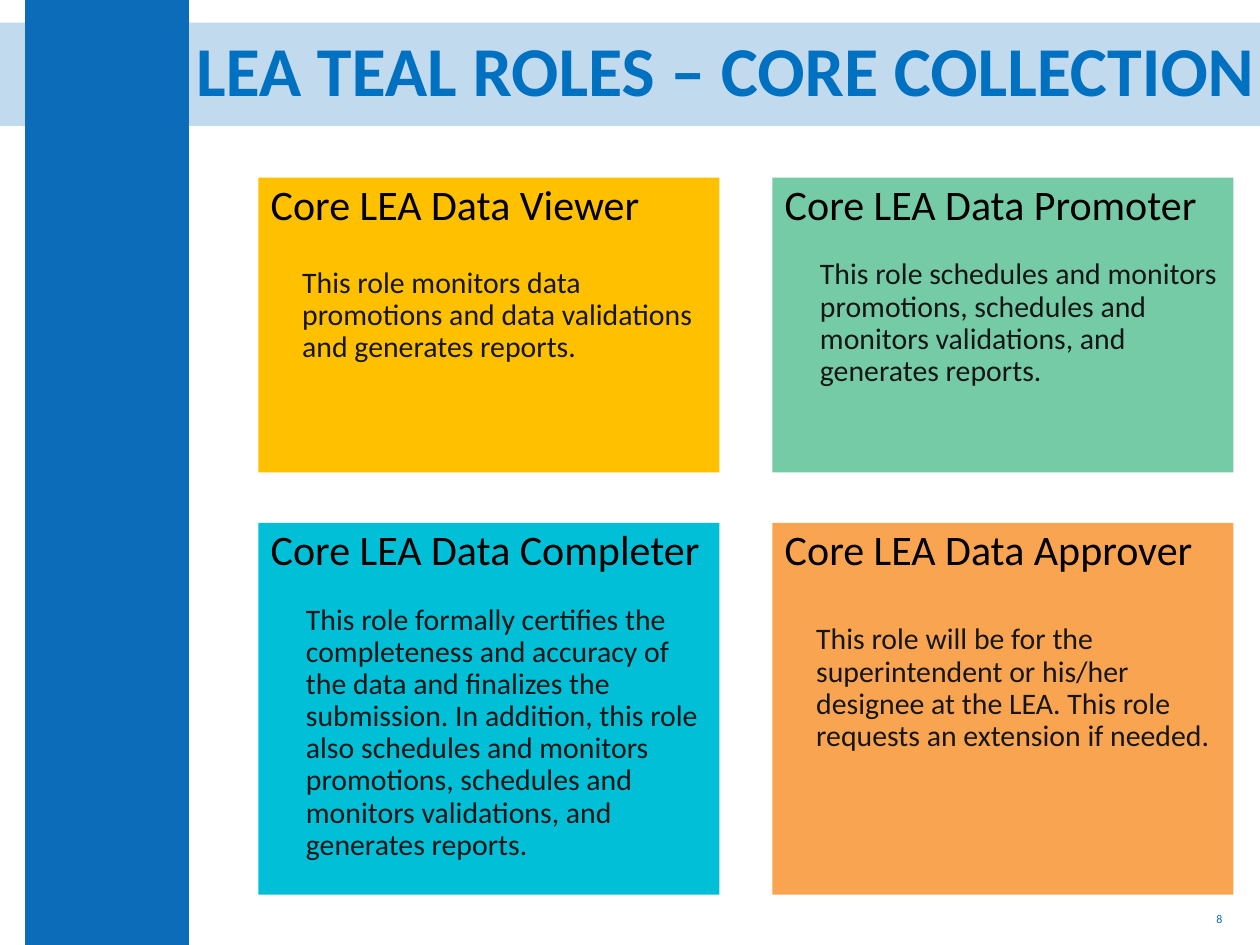
from dataclasses import dataclass

from lxml.etree import SubElement
from pptx import Presentation
from pptx.dml.color import RGBColor as RGB
from pptx.enum.shapes import MSO_SHAPE as Shape
from pptx.enum.text import MSO_ANCHOR as Anchor, PP_ALIGN as Align
from pptx.oxml.ns import qn
from pptx.util import Inches, Pt


@dataclass(frozen=True)
class Theme:
    font: str = "Calibri"
    blue: str = "0D6CB9"
    title: str = "0070C0"
    heading: str = "000000"
    body: str = "161616"
    title_size: float = 40
    heading_size: float = 24
    body_size: float = 17
    number_size: float = 6.8
    line_spacing: float = 0.9


THEME = Theme()
WIDTH, HEIGHT = 10, 7.5

# Card grid: column lefts, shared width, and (top, height) of each row
COLUMNS = (2.05, 6.13)
CARD_WIDTH = 3.66
ROWS = ((1.41, 2.34), (4.15, 2.95))

# Row, column, fill, role, description, gap above it (pt), its indent (in)
ROLES = (
    (0, 0, "FFC000", "Core LEA Data Viewer",
     "This role monitors data promotions and data validations and generates "
     "reports.", 22.2, 0.25),
    (1, 0, "00BFD7", "Core LEA Data Completer",
     "This role formally certifies the completeness and accuracy of the data "
     "and finalizes the submission. In addition, this role also schedules and "
     "monitors promotions, schedules and monitors validations, and generates "
     "reports.", 17.2, 0.28),
    (0, 1, "75CBA6", "Core LEA Data Promoter",
     "This role schedules and monitors promotions, schedules and monitors "
     "validations, and generates reports.", 17.2, 0.28),
    (1, 1, "F9A451", "Core LEA Data Approver",
     "This role will be for the superintendent or his/her designee at the "
     "LEA. This role requests an extension if needed.", 28.5, 0.25),
)


def add_block(slide, box, color):
    block = slide.shapes.add_shape(Shape.RECTANGLE, *map(Inches, box))
    block.shadow.inherit = False
    block.fill.solid()
    block.fill.fore_color.rgb = RGB.from_string(color)
    block.line.fill.background()
    return block


def write(paragraph, text, size, color, align=Align.LEFT, bold=False):
    paragraph.text = text
    paragraph.alignment = align
    paragraph.line_spacing = THEME.line_spacing
    font = paragraph.runs[0].font
    font.name, font.size, font.bold = THEME.font, Pt(size), bold
    font.color.rgb = RGB.from_string(color)


def add_label(slide, box, *style):
    frame = slide.shapes.add_textbox(*map(Inches, box)).text_frame
    frame.word_wrap = True
    frame.vertical_anchor = Anchor.MIDDLE
    write(frame.paragraphs[0], *style)
    return frame


def add_backdrop(slide, width, height):
    # Pale band across the top, then the solid side bar over it
    band = add_block(slide, (0, 0.18, width, 0.82), THEME.blue)
    tint = band.fill._xPr.find(qn("a:solidFill"))[0]
    SubElement(tint, qn("a:alpha")).set("val", "25000")
    add_block(slide, (0.2, 0, 1.3, height), THEME.blue)


def add_title(slide, box):
    frame = add_label(slide, box, "LEA TEAL ROLES – CORE COLLECTION",
                      THEME.title_size, THEME.title, Align.CENTER, True)
    frame.margin_left = frame.margin_right = 0


def add_role_card(slide, box, color, role, description, gap, indent):
    frame = add_block(slide, box, color).text_frame
    frame.word_wrap = True
    frame.vertical_anchor = Anchor.TOP
    write(frame.paragraphs[0], role, THEME.heading_size, THEME.heading)
    detail = frame.add_paragraph()
    write(detail, description, THEME.body_size, THEME.body)
    detail.space_before = Pt(gap)
    detail._p.get_or_add_pPr().set("marL", str(Inches(indent)))


def add_page_number(slide, box):
    add_label(slide, box, "8", THEME.number_size, THEME.blue, Align.RIGHT)


def main():
    deck = Presentation()
    deck.slide_width, deck.slide_height = Inches(WIDTH), Inches(HEIGHT)
    slide = deck.slides.add_slide(deck.slide_layouts[6])

    add_backdrop(slide, WIDTH, HEIGHT)
    add_title(slide, (1.45, 0.27, 8.61, 0.63))
    for row, column, *content in ROLES:
        top, height = ROWS[row]
        add_role_card(slide, (COLUMNS[column], top, CARD_WIDTH, height),
                      *content)
    add_page_number(slide, (7.55, 7.1, 2.25, 0.4))

    deck.save("out.pptx")


if __name__ == "__main__":
    main()
